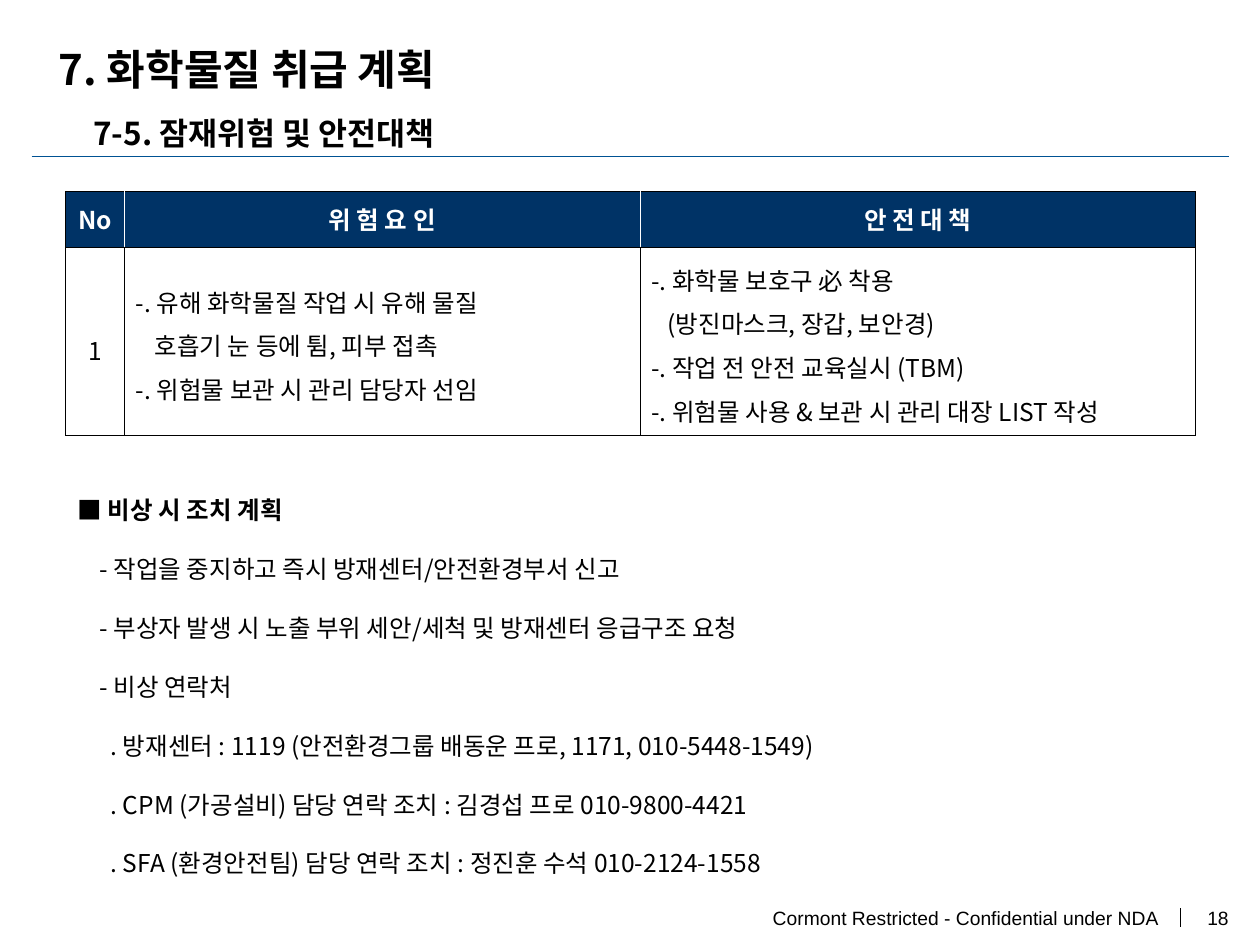
"""Build the chemical handling slide with its hazard table and emergency plan."""
from lxml.etree import SubElement
from pptx import Presentation
from pptx.dml.color import RGBColor
from pptx.enum.shapes import MSO_CONNECTOR
from pptx.enum.text import MSO_ANCHOR, PP_ALIGN
from pptx.oxml.ns import qn
from pptx.util import Cm, Pt

KOREAN_FONT, FOOTER_FONT = "Noto Sans CJK KR", "Arial"
BLACK, WHITE, NAVY, BLUE = "000000", "FFFFFF", "003366", "005293"

TITLE = "7. 화학물질 취급 계획"
SUBTITLE = "7-5. 잠재위험 및 안전대책"
FOOTER = "Cormont Restricted - Confidential under NDA"
PAGE_NUMBER = "18"
HEADERS = ["No", "위 험 요 인", "안 전 대 책"]
COLUMN_WIDTHS = [1.19, 10.39, 11.2]
ROW_HEIGHTS = [1.12, 3.78]
HAZARD_ROW = [
    [("1", 0)],
    [
        ("-. 유해 화학물질 작업 시 유해 물질", 0),
        ("호흡기 눈 등에 튐, 피부 접촉", 0.38),
        ("-. 위험물 보관 시 관리 담당자 선임", 0),
    ],
    [
        ("-. 화학물 보호구 必 착용", 0),
        ("(방진마스크, 장갑, 보안경)", 0.33),
        ("-. 작업 전 안전 교육실시 (TBM)", 0),
        ("-. 위험물 사용 & 보관 시 관리 대장 LIST 작성", 0),
    ],
]
PLAN_HEADING = "■ 비상 시 조치 계획"
PLAN_INDENTS = [0, 0.44, 0.66]
PLAN = [
    (1, "- 작업을 중지하고 즉시 방재센터/안전환경부서 신고"),
    (1, "- 부상자 발생 시 노출 부위 세안/세척 및 방재센터 응급구조 요청"),
    (1, "- 비상 연락처"),
    (2, ". 방재센터 : 1119 (안전환경그룹 배동운 프로, 1171, 010-5448-1549)"),
    (2, ". CPM (가공설비) 담당 연락 조치 : 김경섭 프로 010-9800-4421"),
    (2, ". SFA (환경안전팀) 담당 연락 조치 : 정진훈 수석 010-2124-1558"),
]


def color(value):
    return RGBColor.from_string(value)


def add_line(slide, start, end, line_color, width):
    connector = slide.shapes.add_connector(
        MSO_CONNECTOR.STRAIGHT, *(Cm(value) for value in start + end))
    connector.line.color.rgb = color(line_color)
    connector.line.width = Pt(width)
    SubElement(connector._element.spPr, qn("a:effectLst"))


def write(frame, lines, size, font=KOREAN_FONT, text_color=BLACK, bold=False,
          align=PP_ALIGN.LEFT, spacing=None):
    for index, (text, indent) in enumerate(lines):
        paragraph = frame.add_paragraph() if index else frame.paragraphs[0]
        paragraph.alignment = align
        paragraph.line_spacing = spacing
        if indent:
            paragraph._p.get_or_add_pPr().set("marL", str(Cm(indent)))
        run = paragraph.add_run()
        run.text = text
        run.font.size = Pt(size)
        run.font.bold = bold
        run.font.name = font
        run.font.color.rgb = color(text_color)
        SubElement(run._r.get_or_add_rPr(), qn("a:ea"), typeface=font)


def add_text_frame(slide, left, top, width, height, anchor=MSO_ANCHOR.TOP):
    box = slide.shapes.add_textbox(Cm(left), Cm(top), Cm(width), Cm(height))
    box.text_frame.word_wrap = True
    box.text_frame.vertical_anchor = anchor
    return box.text_frame


def set_borders(cell, left=BLACK, right=BLACK):
    properties = cell._tc.get_or_add_tcPr()
    for side, value in zip("LRTB", (left, right, BLACK, BLACK)):
        border = SubElement(properties, qn(f"a:ln{side}"), w=str(Pt(0.5)))
        fill = SubElement(border, qn("a:solidFill"))
        SubElement(fill, qn("a:srgbClr"), val=value)


def prepare_cell(cell, left=BLACK, right=BLACK):
    cell.vertical_anchor = MSO_ANCHOR.MIDDLE
    cell.margin_left = cell.margin_right = Cm(0.23)
    cell.margin_top = cell.margin_bottom = Cm(0.13)
    set_borders(cell, left, right)


def add_hazard_table(slide):
    table = slide.shapes.add_table(
        2, len(HEADERS), Cm(1.32), Cm(3.86),
        Cm(sum(COLUMN_WIDTHS)), Cm(sum(ROW_HEIGHTS))).table
    table.first_row = table.horz_banding = False
    for row, height in zip(table.rows, ROW_HEIGHTS):
        row.height = Cm(height)
    last = len(HEADERS) - 1
    for index, (header, lines) in enumerate(zip(HEADERS, HAZARD_ROW)):
        table.columns[index].width = Cm(COLUMN_WIDTHS[index])
        cell = table.cell(0, index)
        prepare_cell(cell, WHITE if index else BLACK, WHITE if index < last else BLACK)
        cell.fill.solid()
        cell.fill.fore_color.rgb = color(NAVY)
        write(cell.text_frame, [(header, 0)], 14, text_color=WHITE, bold=True,
              align=PP_ALIGN.CENTER)
        cell = table.cell(1, index)
        prepare_cell(cell)
        cell.fill.background()
        write(cell.text_frame, lines, 14, spacing=Pt(25) if index else 1.5,
              align=PP_ALIGN.LEFT if index else PP_ALIGN.CENTER)


def add_footer(slide):
    for text, left, width in ((FOOTER, 13.37, 10), (PAGE_NUMBER, 23.47, 1.3)):
        frame = add_text_frame(slide, left, 18.13, width, 0.74, MSO_ANCHOR.MIDDLE)
        frame.margin_left = frame.margin_right = 0
        write(frame, [(text, 0)], 11, font=FOOTER_FONT, align=PP_ALIGN.RIGHT)
    add_line(slide, (23.8, 18.31), (23.8, 18.69), BLACK, 1)


def main():
    presentation = Presentation()
    presentation.slide_width, presentation.slide_height = Cm(25.4), Cm(19.05)
    slide = presentation.slides.add_slide(presentation.slide_layouts[6])
    add_line(slide, (0.64, 3.15), (24.77, 3.15), BLUE, 0.75)
    write(add_text_frame(slide, 0.94, 0.74, 23.14, 1.3, MSO_ANCHOR.MIDDLE),
          [(TITLE, 0)], 24, bold=True)
    write(add_text_frame(slide, 1.63, 2.03, 16.81, 1.09),
          [(SUBTITLE, 0)], 18, bold=True, spacing=1.2)
    add_hazard_table(slide)
    plan_frame = add_text_frame(slide, 1.32, 9.27, 22.76, 9.7)
    write(plan_frame, [(PLAN_HEADING, 0)], 14, bold=True, spacing=2)
    for level, text in PLAN:
        paragraph = plan_frame.add_paragraph()
        paragraph.line_spacing = 2
        paragraph._p.get_or_add_pPr().set("marL", str(Cm(PLAN_INDENTS[level])))
        run = paragraph.add_run()
        run.text = text
        run.font.size = Pt(14)
        run.font.name = KOREAN_FONT
        run.font.color.rgb = color(BLACK)
        SubElement(run._r.get_or_add_rPr(), qn("a:ea"), typeface=KOREAN_FONT)
    add_footer(slide)
    presentation.save("out.pptx")


if __name__ == "__main__":
    main()
